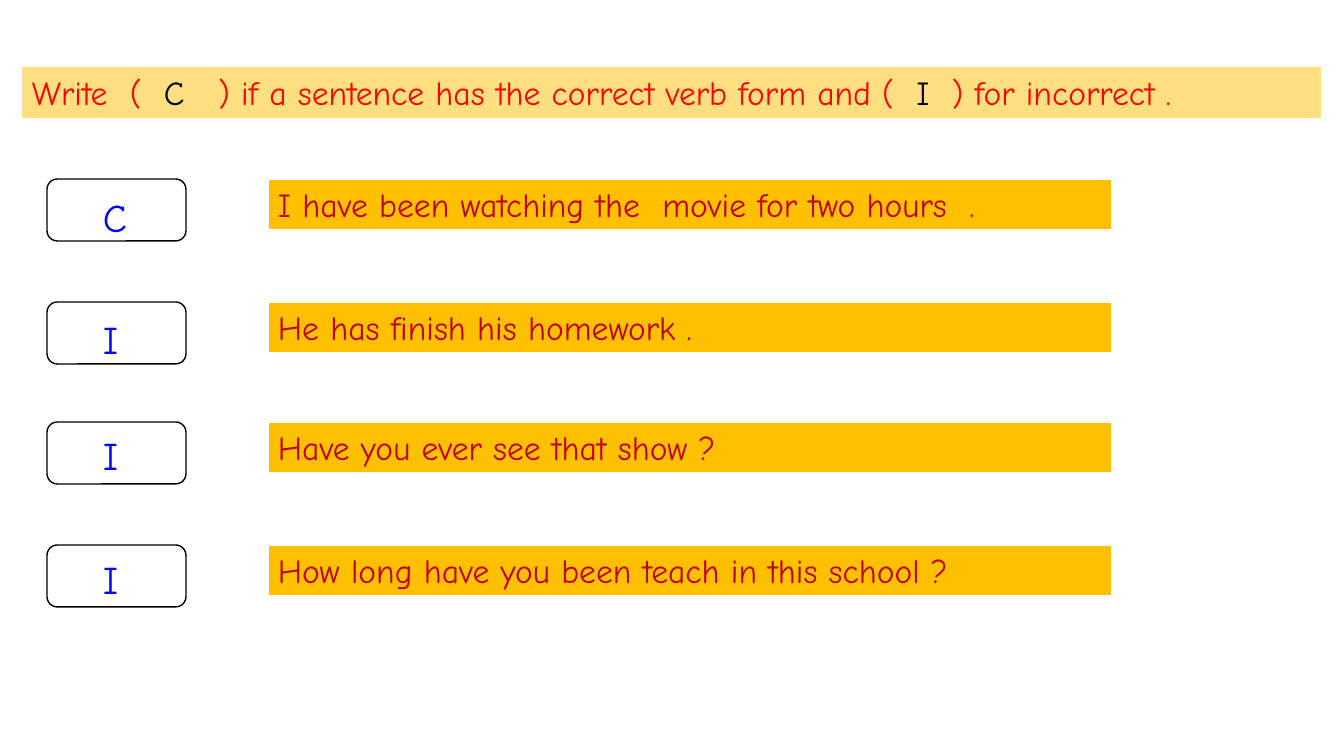
from lxml.etree import SubElement
from pptx import Presentation
from pptx.dml.color import RGBColor
from pptx.enum.shapes import MSO_SHAPE as Shape
from pptx.enum.text import MSO_ANCHOR as Anchor, PP_ALIGN as Align
from pptx.oxml.ns import qn
from pptx.util import Pt

EMU_PER_PX = 914400 / 100.8
FONT = "Comic Neue"
INSTRUCTION = [
    ("Write  (  ", "FF0000"),
    ("C", "000000"),
    ("   ) if a sentence has the correct verb form and (  ", "FF0000"),
    ("I", "000000"),
    ("  ) for incorrect .", "FF0000"),
]
QUESTIONS = [
    (179, 188, "C", "I have been watching the  movie for two hours  ."),
    (302, 310, "I", "He has finish his homework ."),
    (422, 426, "I", "Have you ever see that show ?"),
    (545, 550, "I", "How long have you been teach in this school ?"),
]


def px(length):
    """Turn pixels into EMU."""
    return round(length * EMU_PER_PX)


def color(value):
    """Turn a hex string into a colour."""
    return RGBColor.from_string(value)


def add_box(slide, kind, box, fill=None, line=None, width=1):
    """Add a preset shape with an optional fill and outline."""
    shape = slide.shapes.add_shape(kind, *map(px, box))
    shape.shadow.inherit = False
    if fill:
        shape.fill.solid()
        shape.fill.fore_color.rgb = color(fill)
    else:
        shape.fill.background()
    if line:
        shape.line.color.rgb = color(line)
        shape.line.width = Pt(width)
    else:
        shape.line.fill.background()
    return shape


def write(shape, runs, size, anchor=Anchor.TOP):
    """Write left-aligned coloured runs in a shape."""
    frame = shape.text_frame
    frame.word_wrap = True
    frame.vertical_anchor = anchor
    paragraph = frame.paragraphs[0]
    paragraph.alignment = Align.LEFT
    paragraph.font.name = FONT
    paragraph.font.size = Pt(size)
    for text, text_color in runs:
        run = paragraph.add_run()
        run.text = text
        run.font.color.rgb = color(text_color)


def add_instruction(slide):
    """Add the half-transparent instruction banner."""
    banner = add_box(slide, Shape.RECTANGLE, (22, 67, 1299, 51), "FFC000")
    fill_color = banner.fill._xPr.find(qn("a:solidFill"))[0]
    SubElement(fill_color, qn("a:alpha"), val="50000")
    write(banner, INSTRUCTION, 24)


def add_question(slide, top, answer_top, answer, sentence):
    """Add an answer box, its letter and the sentence beside it."""
    add_box(slide, Shape.ROUNDED_RECTANGLE, (47, top, 139, 62), line="000000")
    bar = add_box(slide, Shape.RECTANGLE, (268, top, 844, 51), "FFC000", "FFFFFF", 1.5)
    write(bar, [(sentence, "C00000")], 24, Anchor.MIDDLE)
    letter = slide.shapes.add_textbox(*map(px, (76, answer_top, 84, 57)))
    letter.text_frame.margin_left = px(27)
    write(letter, [(answer, "0000FF")], 28)


def main():
    """Build the verb form exercise."""
    presentation = Presentation()
    presentation.slide_width = px(1344)
    presentation.slide_height = px(756)
    slide = presentation.slides.add_slide(presentation.slide_layouts[6])
    add_instruction(slide)
    for question in QUESTIONS:
        add_question(slide, *question)
    presentation.save("out.pptx")


if __name__ == "__main__":
    main()
